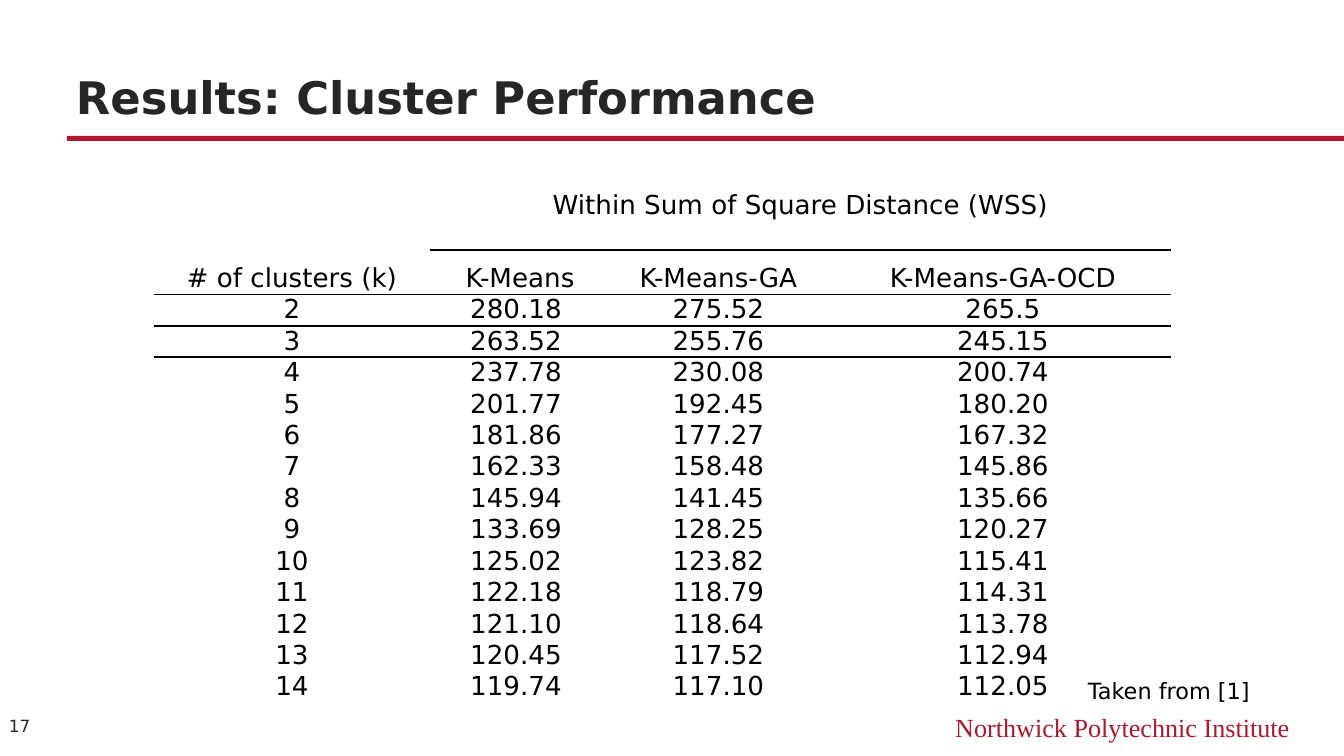
import pptx
import pptx.util
import pptx.dml.color
import pptx.enum.shapes
import pptx.enum.text
import pptx.oxml

PX = 914400 / 134.4
SANS = "DejaVu Sans"
RED = "AB192D"
DARK = "262626"
BLACK = "000000"
ALIGN = pptx.enum.text.PP_ALIGN
ANCHOR = pptx.enum.text.MSO_ANCHOR


def px(n):
    return pptx.util.Emu(round(n * PX))


def style(tf, text, size, color, font=SANS, bold=False, align=ALIGN.LEFT, anchor=ANCHOR.TOP, inset=(9, 5)):
    tf.text = text
    tf.word_wrap = True
    tf.vertical_anchor = anchor
    tf.margin_left = tf.margin_right = px(inset[0])
    tf.margin_top = tf.margin_bottom = px(inset[1])
    p = tf.paragraphs[0]
    p.alignment = align
    f = p.runs[0].font
    f.name, f.size, f.bold = font, pptx.util.Pt(size), bold
    f.color.rgb = pptx.dml.color.RGBColor.from_string(color)


prs = pptx.Presentation()
prs.slide_width, prs.slide_height = px(1344), px(756)
s = prs.slides.add_slide(prs.slide_layouts[5])

title = s.shapes.title
title.left, title.top, title.width, title.height = px(67), px(39), px(1210), px(89)
style(title.text_frame, "Results: Cluster Performance", 24, DARK, bold=True, anchor=ANCHOR.BOTTOM)

rule = s.shapes.add_shape(pptx.enum.shapes.MSO_SHAPE.RECTANGLE, px(67), px(136), px(1277), px(5))
rule.shadow.inherit = False
rule.fill.solid()
rule.fill.fore_color.rgb = pptx.dml.color.RGBColor.from_string(RED)
rule.line.fill.background()

footer = s.shapes.add_textbox(px(806), px(706), px(493), px(40))
style(footer.text_frame, "Northwick Polytechnic Institute", 14, RED, font="Times New Roman", align=ALIGN.RIGHT)

number = s.shapes.add_textbox(px(0), px(704), px(67), px(43))
style(number.text_frame, "17", 9, DARK, anchor=ANCHOR.MIDDLE)

rows = [
    ("", "Within Sum of Square Distance (WSS)", "", ""),
    ("# of clusters (k)", " K-Means", "K-Means-GA", "K-Means-GA-OCD"),
    ("2", "280.18", "275.52", "265.5"),
    ("3", "263.52", "255.76", "245.15"),
    ("4", "237.78", "230.08", "200.74"),
    ("5", "201.77", "192.45", "180.20"),
    ("6", "181.86", "177.27", "167.32"),
    ("7", "162.33", "158.48", "145.86"),
    ("8", "145.94", "141.45", "135.66"),
    ("9", "133.69", "128.25", "120.27"),
    ("10", "125.02", "123.82", "115.41"),
    ("11", "122.18", "118.79", "114.31"),
    ("12", "121.10", "118.64", "113.78"),
    ("13", "120.45", "117.52", "112.94"),
    ("14", "119.74", "117.10", "112.05"),
]
col_widths = [276, 172, 233, 336]
row_heights = [60, 44] + [30] * 13

frame = s.shapes.add_table(len(rows), 4, px(154), px(190), px(sum(col_widths)), px(sum(row_heights)))
table = frame.table
table.first_row = table.horz_banding = False
table._tbl.tblPr[0].text = "{2D5ABB26-0587-4C30-8999-92F81FD0307C}"
for col, width in zip(table.columns, col_widths):
    col.width = px(width)
for row, height in zip(table.rows, row_heights):
    row.height = px(height)
table.cell(0, 1).merge(table.cell(0, 3))

for i, values in enumerate(rows):
    for j, value in enumerate(values):
        cell = table.cell(i, j)
        cell.margin_left = cell.margin_right = cell.margin_bottom = 0
        cell.margin_top = px(13 if i == 1 else 0)
        cell.fill.background()
        p = cell.text_frame.paragraphs[0]
        p.text = value
        p.alignment = ALIGN.CENTER
        p.font.size = pptx.util.Pt(14)
        for r in p.runs:
            r.font.name, r.font.size = SANS, pptx.util.Pt(14)
            r.font.color.rgb = pptx.dml.color.RGBColor.from_string(BLACK)
        for side, line in (("B", i), ("T", i - 1)):
            if line in (1, 2) or (line == 0 and j > 0):
                cell._tc.get_or_add_tcPr().insert(0, pptx.oxml.parse_xml(
                    f'<a:ln{side} xmlns:a="http://schemas.openxmlformats.org/drawingml/2006/main" w="12700">'
                    f'<a:solidFill><a:srgbClr val="{BLACK}"/></a:solidFill></a:ln{side}>'))

source = s.shapes.add_textbox(px(1075), px(664), px(249), px(43))
style(source.text_frame, "Taken from [1]", 12, BLACK, inset=(13, 13))

prs.save("out.pptx")
